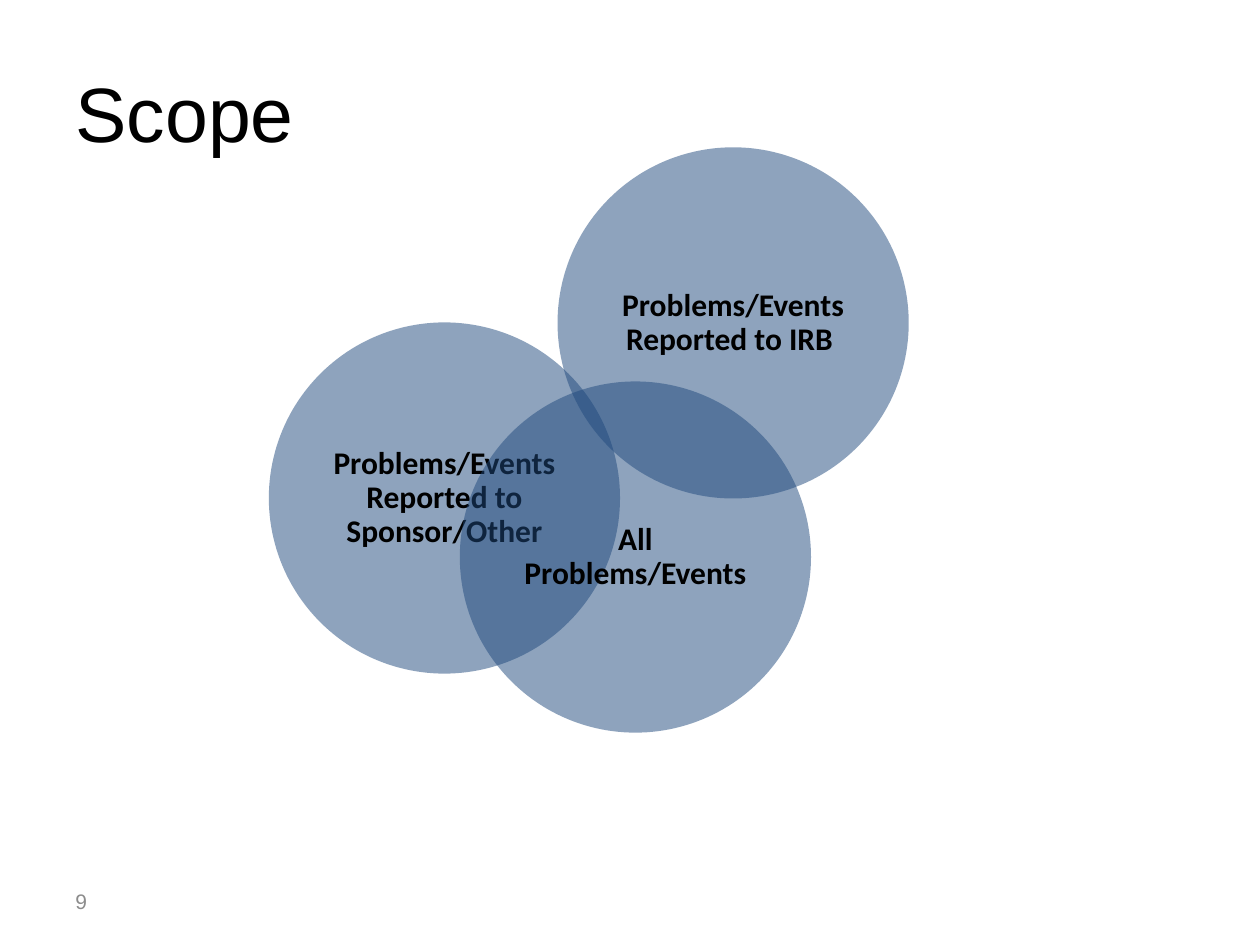
from dataclasses import dataclass

from lxml.etree import SubElement
from pptx import Presentation
from pptx.dml.color import RGBColor
from pptx.enum.shapes import MSO_SHAPE
from pptx.enum.text import MSO_ANCHOR, PP_ALIGN
from pptx.oxml.ns import qn
from pptx.slide import Slide
from pptx.text.text import TextFrame
from pptx.util import Cm, Pt

NAVY = RGBColor(0x1F, 0x49, 0x7D)
BLACK = RGBColor(0, 0, 0)
GRAY = RGBColor(0x8C, 0x8C, 0x8C)
SIZE = Cm(7.08)
INSET = Cm(0.18)


@dataclass
class Circle:
    left: float
    top: float
    text: str


CIRCLES = [
    Circle(5.42, 6.5, "Problems/Events Reported to Sponsor/Other"),
    Circle(9.27, 7.69, "All Problems/Events"),
    Circle(11.24, 2.97, "Problems/Events Reported to IRB "),
]


def write(frame: TextFrame, text: str, face: str, size: int, color: RGBColor,
          bold: bool = False, align: PP_ALIGN = PP_ALIGN.LEFT) -> None:
    frame.text = text
    frame.word_wrap = True
    frame.vertical_anchor = MSO_ANCHOR.MIDDLE
    line = frame.paragraphs[0]
    line.alignment = align
    font = line.font
    font.name, font.size, font.bold = face, Pt(size), bold
    font.color.rgb = color


def draw_circle(slide: Slide, item: Circle) -> None:
    shape = slide.shapes.add_shape(
        MSO_SHAPE.OVAL, Cm(item.left), Cm(item.top), SIZE, SIZE)
    shape.shadow.inherit = False
    shape.line.fill.background()
    shape.fill.solid()
    shape.fill.fore_color.rgb = NAVY
    color = shape.element.spPr.find(qn("a:solidFill")).find(qn("a:srgbClr"))
    SubElement(color, qn("a:alpha")).set("val", "50000")
    frame = shape.text_frame
    frame.margin_left = frame.margin_right = INSET
    frame.margin_top = frame.margin_bottom = INSET
    write(frame, item.text, "Calibri", 18, BLACK, True, PP_ALIGN.CENTER)
    frame.paragraphs[0].line_spacing = 0.9


def main() -> None:
    deck = Presentation()
    deck.slide_width, deck.slide_height = Cm(25.4), Cm(19.05)
    slide = deck.slides.add_slide(deck.slide_layouts[5])

    title = slide.shapes.title
    title.left, title.top = Cm(1.27), Cm(0.66)
    title.width, title.height = Cm(22.86), Cm(3.18)
    write(title.text_frame, "Scope", "Arial", 44, BLACK)

    for item in CIRCLES:
        draw_circle(slide, item)

    number = slide.shapes.add_textbox(Cm(1.27), Cm(17.65), Cm(5.93), Cm(1.02))
    write(number.text_frame, "9", "Arial", 12, GRAY)

    deck.save("out.pptx")


if __name__ == "__main__":
    main()
